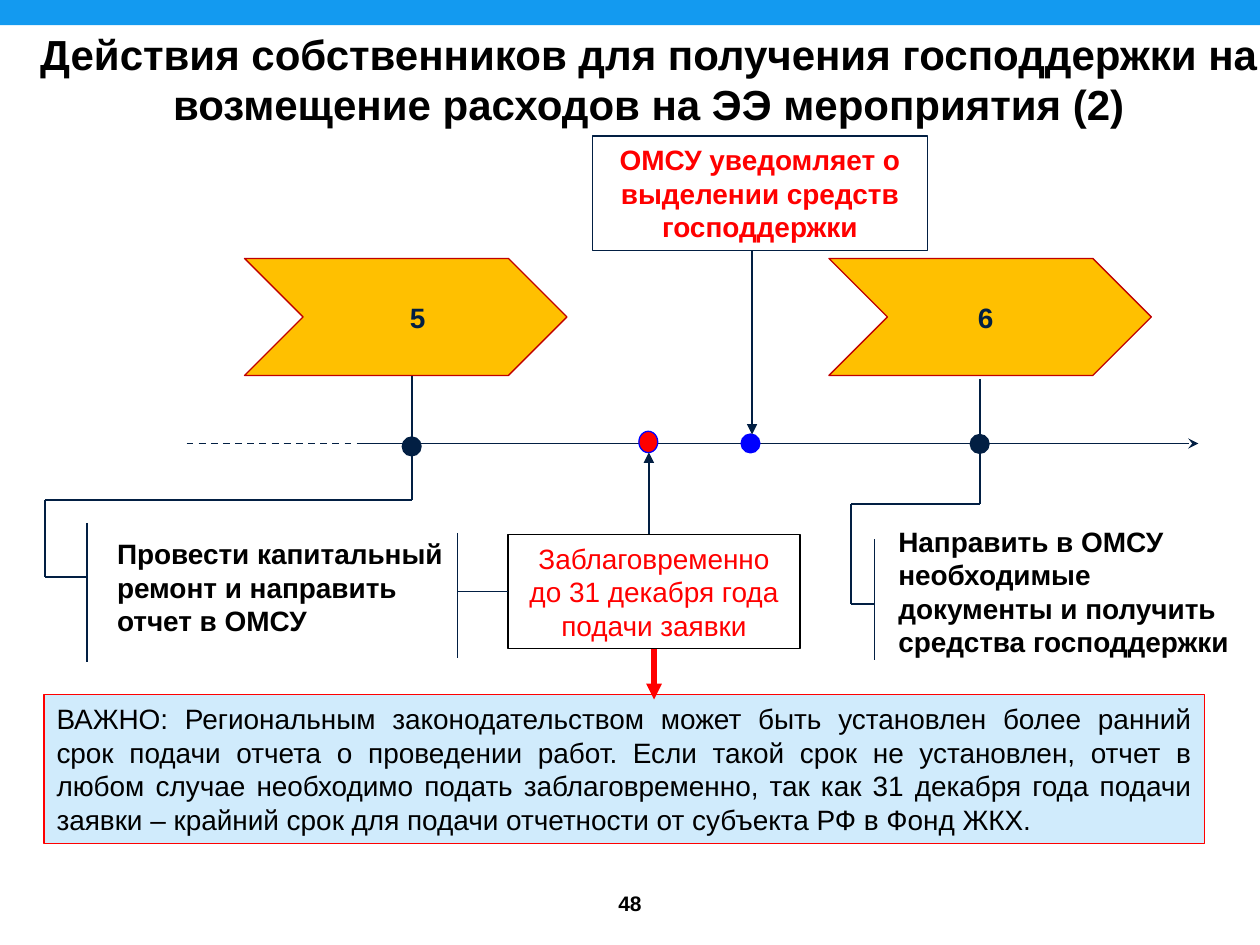
import pptx
import pptx.dml.color
import pptx.enum.dml
import pptx.enum.shapes
import pptx.enum.text
import pptx.oxml
import pptx.oxml.ns
import pptx.util
from lxml import etree

Cm, Pt = pptx.util.Cm, pptx.util.Pt
SHAPE = pptx.enum.shapes.MSO_SHAPE
ALIGN = pptx.enum.text.PP_ALIGN
ANCHOR = pptx.enum.text.MSO_ANCHOR
COLORS = {
    "band": "139AF0", "navy": "021F43", "black": "000000", "white": "FFFFFF",
    "red": "FF0000", "blue": "0000FF", "gold": "FFC000", "maroon": "C00000",
    "pale": "D0EBFC",
}


def rgb(name):
    """Return the named palette colour."""
    return pptx.dml.color.RGBColor.from_string(COLORS[name])


def write(shape, text, size=16, color="black", bold=False, align=ALIGN.CENTER, anchor=ANCHOR.MIDDLE):
    """Fill a shape with one formatted paragraph."""
    frame = shape.text_frame
    frame.word_wrap = True
    frame.auto_size = pptx.enum.text.MSO_AUTO_SIZE.NONE
    frame.vertical_anchor = anchor
    frame.text = text
    paragraph = frame.paragraphs[0]
    paragraph.alignment = align
    paragraph.font.name = "Arial"
    paragraph.font.size = Pt(size)
    paragraph.font.bold = bold
    paragraph.font.color.rgb = rgb(color)


def add_label(slide, box, text, **style):
    """Add a text box at a box in centimetres."""
    write(slide.shapes.add_textbox(*map(Cm, box)), text, **style)


def add_figure(slide, kind, box, fill, line=None):
    """Add a filled preset shape at a box in centimetres."""
    shape = slide.shapes.add_shape(kind, *map(Cm, box))
    shape.shadow.inherit = False
    shape.fill.solid()
    shape.fill.fore_color.rgb = rgb(fill)
    if line:
        shape.line.color.rgb = rgb(line)
        shape.line.width = Pt(0.75)
    else:
        shape.line.fill.background()
    return shape


def add_line(slide, start, end, color="navy", width=1, arrow=None, dashed=False):
    """Add a straight connector, with an arrowhead at its end if asked."""
    connector = slide.shapes.add_connector(
        pptx.enum.shapes.MSO_CONNECTOR.STRAIGHT, *map(Cm, (*start, *end)))
    connector.line.color.rgb = rgb(color)
    connector.line.width = Pt(width)
    if dashed:
        connector.line.dash_style = pptx.enum.dml.MSO_LINE.DASH
    if arrow:
        tail = etree.SubElement(connector.line._get_or_add_ln(), pptx.oxml.ns.qn("a:tailEnd"))
        tail.set("type", arrow)
    etree.SubElement(connector._element.spPr, pptx.oxml.ns.qn("a:effectLst"))
    return connector


def add_dot(slide, x, y, fill, line, height=0.38):
    """Add a timeline marker centred on a point."""
    add_figure(slide, SHAPE.OVAL, (x - 0.19, y - height / 2, 0.38, height), fill, line)


def add_heading(slide, box, text):
    """Place the title placeholder."""
    title = slide.shapes.title
    title.left, title.top, title.width, title.height = map(Cm, box)
    write(title, text, size=24, bold=True)


def add_timeline(slide, box):
    """Draw the axis with its dashed lead-in and the two event markers."""
    left, top, width, height = box
    y = top + height / 2
    add_line(slide, (left, y), (left + 4.32, y), dashed=True)
    add_line(slide, (left + 3.58, y), (left + width, y), arrow="stealth")
    add_dot(slide, left + 9.31, y - 0.03, "red", "blue", 0.43)
    add_dot(slide, left + 11.37, y, "blue", "blue")


def add_step(slide, box, number, text, chevron, stem, elbow, bar, label, dot):
    """Draw a numbered chevron, its stem, marker and bracketed description."""
    left, top = box[:2]
    stem_x, stem_top = left + stem[0], top + stem[1]
    elbow_y, foot_y = (top + y for y in elbow)
    bar_x, bar_top, bar_bottom = left + bar[0], top + bar[1], top + bar[2]
    add_figure(slide, SHAPE.CHEVRON, (left + chevron, top, 6.5, 2.36), "gold", "maroon")
    add_label(slide, (stem_x - 0.7, top + 0.72, 1.64, 0.94), number, color="navy", bold=True)
    corners = [(stem_x, stem_top), (stem_x, elbow_y), (left, elbow_y), (left, foot_y), (bar_x, foot_y)]
    for start, end in zip(corners, corners[1:]):
        add_line(slide, start, end)
    add_line(slide, (bar_x, bar_top), (bar_x, bar_bottom))
    add_dot(slide, stem_x, top + dot, "navy", "navy")
    add_label(slide, (left + label[0], top + label[1], *label[2:]), text,
              bold=True, align=ALIGN.LEFT, anchor=ANCHOR.TOP)


def add_notice(slide, box, text):
    """Draw the notification box with its arrow to the timeline."""
    left, top, width, height = box
    write(add_figure(slide, SHAPE.RECTANGLE, box, "white", "navy"), text, color="red", bold=True)
    add_line(slide, (left + 3.22, top + height), (left + 3.22, top + 6.02), arrow="triangle")


def add_deadline(slide, box, text):
    """Draw the deadline box with its bracket and its two arrows."""
    left, top, width, height = box
    shape = add_figure(slide, SHAPE.RECTANGLE, box, "white", "black")
    write(shape, text, color="red")
    bracket_x, middle = left - 1.02, top + height / 2
    add_line(slide, (bracket_x, top - 0.03), (bracket_x, top + 2.49))
    add_line(slide, (left, middle), (bracket_x, middle)).begin_connect(shape, 1)
    add_line(slide, (left + 2.84, top), (left + 2.84, top - 1.65), arrow="triangle")
    center = left + width / 2
    warning = add_line(slide, (center, top + height), (center, top + 3.33), "red", 3, "triangle")
    warning.begin_connect(shape, 2)


def add_warning(slide, box, text):
    """Draw the highlighted note."""
    write(add_figure(slide, SHAPE.RECTANGLE, box, "pale", "red"), text, align=ALIGN.JUSTIFY)


def main():
    """Build and save the slide."""
    presentation = pptx.Presentation()
    presentation.slide_width, presentation.slide_height = Cm(25.4), Cm(19.05)
    slide = presentation.slides.add_slide(presentation.slide_layouts[5])
    add_figure(slide, SHAPE.RECTANGLE, (0, 0, 25.4, 0.51), "band")
    add_label(slide, (11.58, 17.7, 2.24, 1), "48", size=12, bold=True)
    add_heading(slide, (0.53, 0.43, 25.1, 2.31),
                "Действия собственников для получения господдержки на "
                "возмещение расходов на ЭЭ мероприятия (2)")
    add_timeline(slide, (3.76, 8.74, 20.4, 0.4))
    add_step(slide, (0.91, 5.21, 8.46, 8.13), "5",
             "Провести капитальный ремонт и направить отчет в ОМСУ",
             chevron=4.02, stem=(7.39, 2.36), elbow=(4.87, 6.42), bar=(0.84, 5.33, 8.13),
             label=(1.2, 5.48, 7.26, 2.31), dot=3.79)
    add_step(slide, (17.15, 5.21, 8.08, 8.23), "6",
             "Направить в ОМСУ необходимые документы и получить средства господдержки",
             chevron=-0.44, stem=(2.6, 2.44), elbow=(4.95, 6.96), bar=(0.48, 5.66, 8.1),
             label=(0.71, 5.23, 7.37, 3), dot=3.74)
    add_notice(slide, (11.94, 2.74, 6.76, 2.31), "ОМСУ уведомляет о выделении средств господдержки")
    add_warning(slide, (0.89, 14, 23.39, 3),
                "ВАЖНО: Региональным законодательством может быть установлен более ранний срок "
                "подачи отчета о проведении работ. Если такой срок не установлен, отчет в любом "
                "случае необходимо подать заблаговременно, так как 31 декабря года подачи заявки "
                "– крайний срок для подачи отчетности от субъекта РФ в Фонд ЖКХ.")
    add_deadline(slide, (10.24, 10.77, 5.89, 2.31), "Заблаговременно до 31 декабря года подачи заявки")
    presentation.save("out.pptx")


if __name__ == "__main__":
    main()
